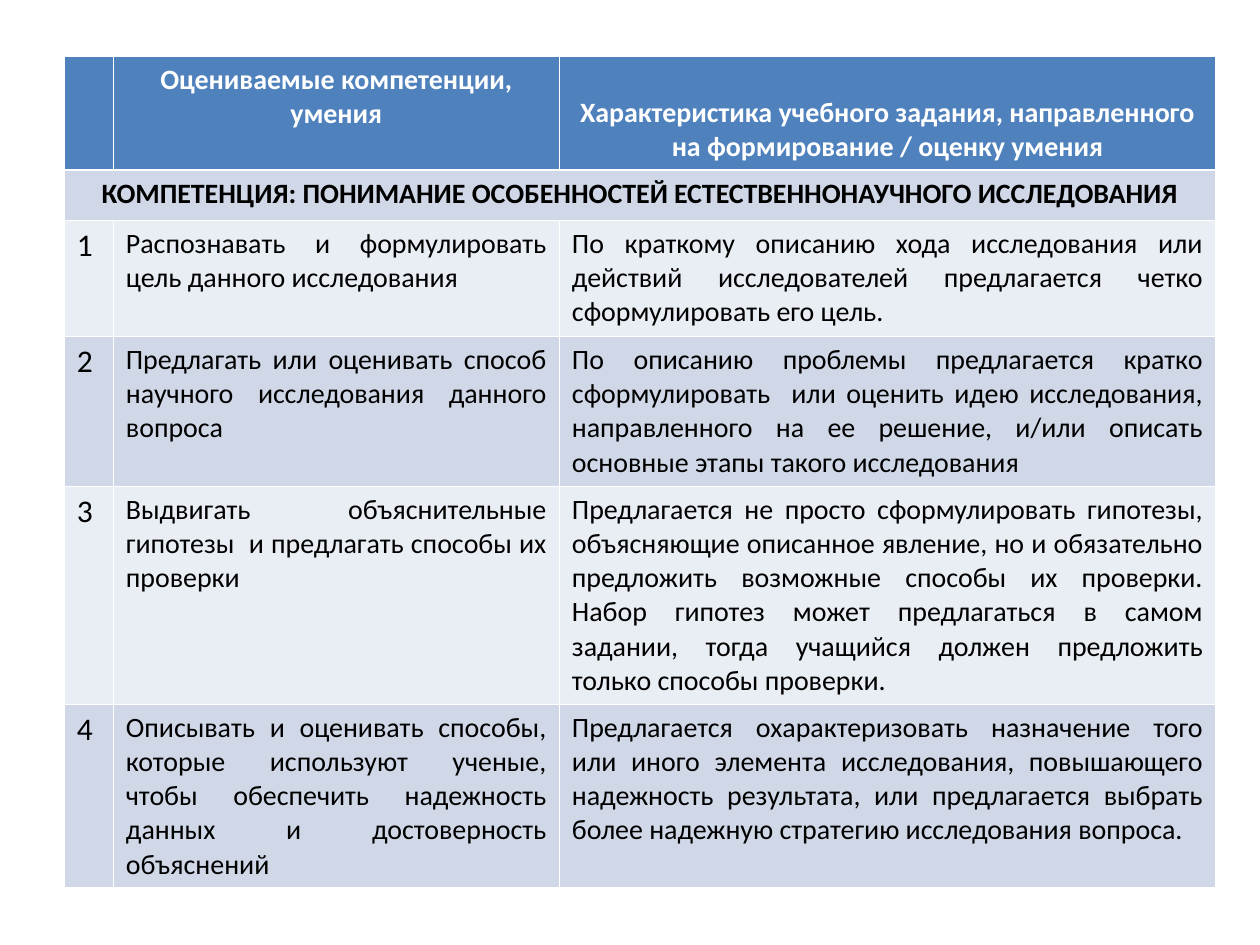
from dataclasses import dataclass

from pptx import Presentation
from pptx.dml.color import RGBColor
from pptx.enum.text import MSO_ANCHOR, PP_ALIGN
from pptx.util import Inches, Pt

HEADER_BLUE = RGBColor(0x4F, 0x81, 0xBD)
BAND_DARK = RGBColor(0xD0, 0xD8, 0xE8)
BAND_LIGHT = RGBColor(0xE9, 0xED, 0xF4)
WHITE = RGBColor(0xFF, 0xFF, 0xFF)
BLACK = RGBColor(0x00, 0x00, 0x00)

COLUMN_WIDTHS = (0.39, 3.54, 5.21)
ROW_HEIGHTS = (0.9, 0.4, 0.92, 1.19, 1.73, 1.45)


@dataclass(frozen=True)
class Skill:
    name: str
    task: str


@dataclass(frozen=True)
class CellStyle:
    fill: RGBColor
    color: RGBColor = BLACK
    size: int = 16
    bold: bool = False
    align: PP_ALIGN = PP_ALIGN.JUSTIFY
    anchor: MSO_ANCHOR = MSO_ANCHOR.TOP


HEADERS = (
    ("", MSO_ANCHOR.TOP),
    ("Оцениваемые компетенции, умения", MSO_ANCHOR.TOP),
    ("Характеристика учебного задания, направленного на формирование / оценку умения",
     MSO_ANCHOR.BOTTOM),
)
COMPETENCE = "КОМПЕТЕНЦИЯ: ПОНИМАНИЕ ОСОБЕННОСТЕЙ ЕСТЕСТВЕННОНАУЧНОГО ИССЛЕДОВАНИЯ"
SKILLS = (
    Skill("Распознавать и формулировать цель данного исследования",
          "По краткому описанию хода исследования или действий исследователей "
          "предлагается четко сформулировать его цель."),
    Skill("Предлагать или оценивать способ научного исследования данного вопроса",
          "По описанию проблемы предлагается кратко сформулировать  или оценить идею "
          "исследования, направленного на ее решение, и/или описать основные этапы "
          "такого исследования"),
    Skill("Выдвигать объяснительные гипотезы  и предлагать способы их проверки",
          "Предлагается не просто сформулировать гипотезы, объясняющие описанное "
          "явление, но и обязательно предложить возможные способы их проверки. Набор "
          "гипотез может предлагаться в самом задании, тогда учащийся должен "
          "предложить только способы проверки."),
    Skill("Описывать и оценивать способы, которые используют ученые, чтобы обеспечить "
          "надежность данных и достоверность объяснений",
          "Предлагается охарактеризовать назначение того или иного элемента "
          "исследования, повышающего надежность результата, или предлагается выбрать "
          "более надежную стратегию исследования вопроса."),
)


def fill_cell(cell, content: str, style: CellStyle) -> None:
    cell.fill.solid()
    cell.fill.fore_color.rgb = style.fill
    cell.vertical_anchor = style.anchor
    cell.text_frame.text = content
    paragraph = cell.text_frame.paragraphs[0]
    paragraph.alignment = style.align
    for run in paragraph.runs:
        run.font.name = "Calibri"
        run.font.size = Pt(style.size)
        run.font.bold = style.bold
        run.font.color.rgb = style.color


def add_skill_table(slide) -> None:
    table = slide.shapes.add_table(
        len(ROW_HEIGHTS), len(COLUMN_WIDTHS), Inches(0.51), Inches(0.45),
        Inches(sum(COLUMN_WIDTHS)), Inches(sum(ROW_HEIGHTS))).table
    for column, width in zip(table.columns, COLUMN_WIDTHS):
        column.width = Inches(width)
    for row, height in zip(table.rows, ROW_HEIGHTS):
        row.height = Inches(height)

    for column, (header, anchor) in enumerate(HEADERS):
        fill_cell(table.cell(0, column), header,
                  CellStyle(HEADER_BLUE, WHITE, bold=True,
                            align=PP_ALIGN.CENTER, anchor=anchor))

    table.cell(1, 0).merge(table.cell(1, len(COLUMN_WIDTHS) - 1))
    fill_cell(table.cell(1, 0), COMPETENCE,
              CellStyle(BAND_DARK, bold=True, align=PP_ALIGN.CENTER))

    for number, skill in enumerate(SKILLS, start=1):
        row = number + 1
        band = BAND_LIGHT if number % 2 else BAND_DARK
        fill_cell(table.cell(row, 0), str(number),
                  CellStyle(band, size=18, align=PP_ALIGN.LEFT))
        fill_cell(table.cell(row, 1), skill.name, CellStyle(band))
        fill_cell(table.cell(row, 2), skill.task, CellStyle(band))


def main() -> None:
    presentation = Presentation()
    presentation.slide_width = Inches(10)
    presentation.slide_height = Inches(7.5)
    blank_layout = presentation.slide_layouts[6]
    add_skill_table(presentation.slides.add_slide(blank_layout))
    presentation.save("out.pptx")


if __name__ == "__main__":
    main()
